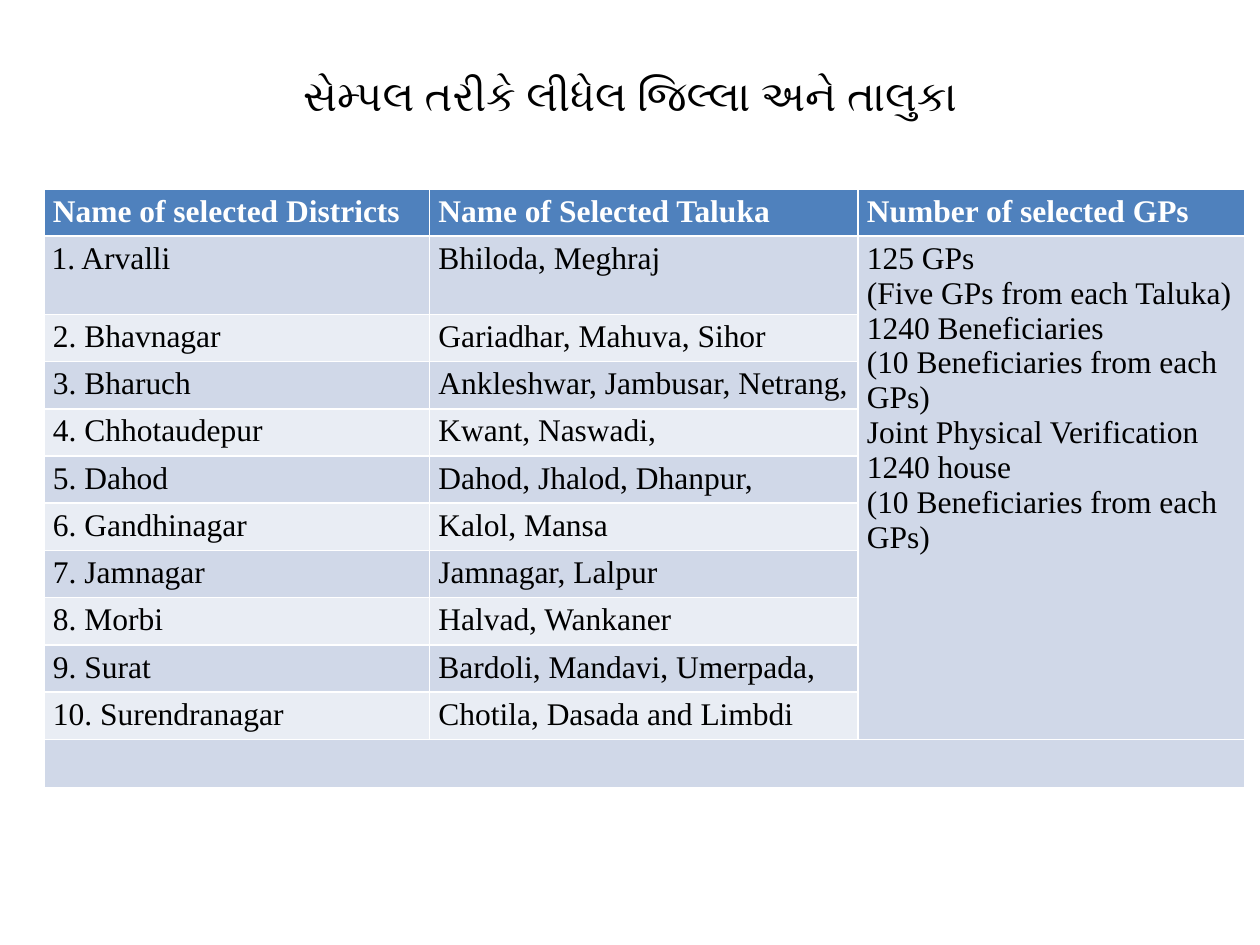
"""Build the slide listing the sampled districts and talukas."""
from pptx import Presentation
from pptx.dml.color import RGBColor
from pptx.enum.text import MSO_ANCHOR, PP_ALIGN
from pptx.util import Inches, Pt

COLORS = {"header": "4F81BD", "odd": "D0D8E8", "even": "E9EDF4", "text": "000000", "header_text": "FFFFFF"}
FONT = "Times New Roman"
HEADERS = ["Name of selected Districts", "Name of Selected Taluka", "Number of selected GPs"]
TALUKAS = {
    "Arvalli": "Bhiloda, Meghraj",
    "Bhavnagar": "Gariadhar, Mahuva, Sihor",
    "Bharuch": "Ankleshwar, Jambusar, Netrang,",
    "Chhotaudepur": "Kwant, Naswadi,",
    "Dahod": "Dahod, Jhalod, Dhanpur,",
    "Gandhinagar": "Kalol, Mansa",
    "Jamnagar": "Jamnagar, Lalpur",
    "Morbi": "Halvad, Wankaner",
    "Surat": "Bardoli, Mandavi, Umerpada,",
    "Surendranagar": "Chotila, Dasada and Limbdi",
}
SAMPLE_SIZE = [
    "125 GPs",
    "(Five GPs from each Taluka)",
    "1240 Beneficiaries",
    "(10 Beneficiaries from each GPs)",
    "Joint Physical Verification 1240 house",
    "(10 Beneficiaries from each GPs)",
]


def style_text(frame, size, color, bold=False):
    for paragraph in frame.paragraphs:
        for run in paragraph.runs:
            for name, value in {"name": FONT, "size": Pt(size), "bold": bold}.items():
                setattr(run.font, name, value)
            run.font.color.rgb = RGBColor.from_string(COLORS[color])


prs = Presentation()
prs.slide_width, prs.slide_height = Inches(10), Inches(7.5)
slide = prs.slides.add_slide(prs.slide_layouts[5])

title = slide.shapes.title
title_box = {"left": 0.69, "top": 0.42, "width": 8.62, "height": 0.67}
for name, value in title_box.items():
    setattr(title, name, Inches(value))
title.text_frame.text = "સેમ્પલ તરીકે લીધેલ જિલ્લા અને તાલુકા"
title.text_frame.vertical_anchor = MSO_ANCHOR.MIDDLE
title.text_frame.paragraphs[0].alignment = PP_ALIGN.CENTER
style_text(title.text_frame, 24, "text")

rows = [HEADERS]
for number, (district, talukas) in enumerate(TALUKAS.items(), 1):
    rows.append([f"{number}. {district}", talukas, ""])
rows[1][2] = "\n".join(SAMPLE_SIZE)
rows.append([""] * 3)

table = slide.shapes.add_table(
    len(rows), 3, Inches(0.35), Inches(1.5), Inches(9.53), Inches(4.75)
).table
for column, width in zip(table.columns, [3.06, 3.4, 3.07]):
    column.width = Inches(width)
for row in table.rows:
    row.height = Inches(0.375)
table.rows[1].height = Inches(0.62)

margins = {"margin_left": 0.07, "margin_right": 0.07, "margin_top": 0.04, "margin_bottom": 0.04}
for r, texts in enumerate(rows):
    band = "header" if r == 0 else "odd" if r % 2 else "even"
    for c, text in enumerate(texts):
        cell = table.cell(r, c)
        cell.fill.solid()
        cell.fill.fore_color.rgb = RGBColor.from_string(COLORS[band])
        for name, value in margins.items():
            setattr(cell, name, Inches(value))
        if text:
            cell.text_frame.text = text
            style_text(cell.text_frame, 18, "text" if r else "header_text", bold=r == 0)

arvalli = table.cell(1, 0)
arvalli_margins = {"margin_left": 0.06, "margin_right": 0.06, "margin_top": 0, "margin_bottom": 0}
for name, value in arvalli_margins.items():
    setattr(arvalli, name, Inches(value))
arvalli_format = {"alignment": PP_ALIGN.JUSTIFY, "line_spacing": 1.15, "space_after": Pt(10)}
for name, value in arvalli_format.items():
    setattr(arvalli.text_frame.paragraphs[0], name, value)

table.cell(1, 2).merge(table.cell(len(TALUKAS), 2))
table.cell(len(rows) - 1, 0).merge(table.cell(len(rows) - 1, 2))

prs.save("out.pptx")
